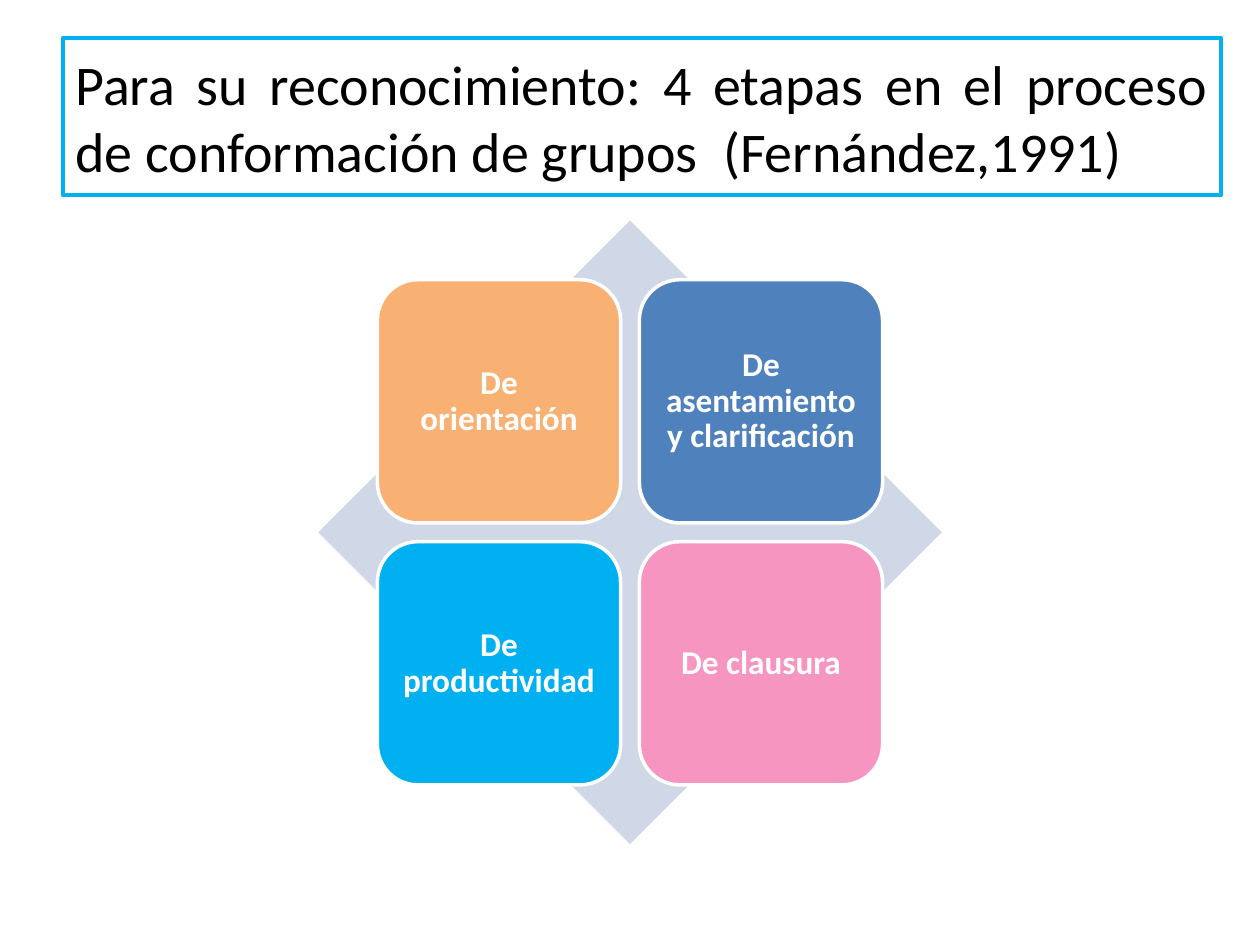
from pptx import Presentation
from pptx import util as u
from pptx.dml import color
from pptx.enum import shapes, text


def rgb(value):
    return color.RGBColor.from_string(value)


def add_box(kind, left, top, width, height, fill=None, line=None, weight=0):
    """Add a shadowless shape; no fill or line colour means none is drawn."""
    shape = slide.shapes.add_shape(kind, u.Pt(left), u.Pt(top), u.Pt(width), u.Pt(height))
    shape.shadow.inherit = False
    if fill:
        shape.fill.solid()
        shape.fill.fore_color.rgb = rgb(fill)
    else:
        shape.fill.background()
    if line:
        shape.line.color.rgb = rgb(line)
        shape.line.width = u.Pt(weight)
    else:
        shape.line.fill.background()
    frame = shape.text_frame
    frame.word_wrap = True
    frame.vertical_anchor = text.MSO_ANCHOR.MIDDLE
    return shape


presentation = Presentation()
presentation.slide_width = u.Pt(720)
presentation.slide_height = u.Pt(540)
slide = presentation.slides.add_slide(presentation.slide_layouts[6])

# Title
title = add_box(shapes.MSO_SHAPE.RECTANGLE, 36, 21.6, 661.7, 90, line="00B0F0", weight=2.25)
paragraph = title.text_frame.paragraphs[0]
paragraph.alignment = text.PP_ALIGN.JUSTIFY
run = paragraph.add_run()
run.text = "Para su reconocimiento: 4 etapas en el proceso de conformación de grupos  (Fernández,1991)"
run.font.name = "Calibri"
run.font.size = u.Pt(32)
run.font.color.rgb = rgb("000000")

# Diamond behind the stages
CENTER_X, CENTER_Y = 360, 304.2
DIAMOND = 356.4
add_box(shapes.MSO_SHAPE.DIAMOND, CENTER_X - DIAMOND / 2, CENTER_Y - DIAMOND / 2,
        DIAMOND, DIAMOND, fill="D0D8E8")

# Four stages, two by two around the centre
CARD, GAP = 139, 10.7
stages = [
    ("De orientación", "F9B073"),
    ("De asentamiento y clarificación", "4F81BD"),
    ("De productividad", "00B0F0"),
    ("De clausura", "F595C0"),
]
for index, (name, fill) in enumerate(stages):
    row, column = divmod(index, 2)
    left = CENTER_X - CARD - GAP / 2 + column * (CARD + GAP)
    top = CENTER_Y - CARD - GAP / 2 + row * (CARD + GAP)
    card = add_box(shapes.MSO_SHAPE.ROUNDED_RECTANGLE, left, top, CARD, CARD,
                   fill=fill, line="FFFFFF", weight=2)
    frame = card.text_frame
    frame.margin_left = frame.margin_right = u.Pt(5.7)
    frame.margin_top = frame.margin_bottom = u.Pt(5.7)
    paragraph = frame.paragraphs[0]
    paragraph.alignment = text.PP_ALIGN.CENTER
    paragraph.line_spacing = 0.9
    run = paragraph.add_run()
    run.text = name
    run.font.name = "Calibri"
    run.font.size = u.Pt(19)
    run.font.bold = True
    run.font.color.rgb = rgb("FFFFFF")

presentation.save("out.pptx")
